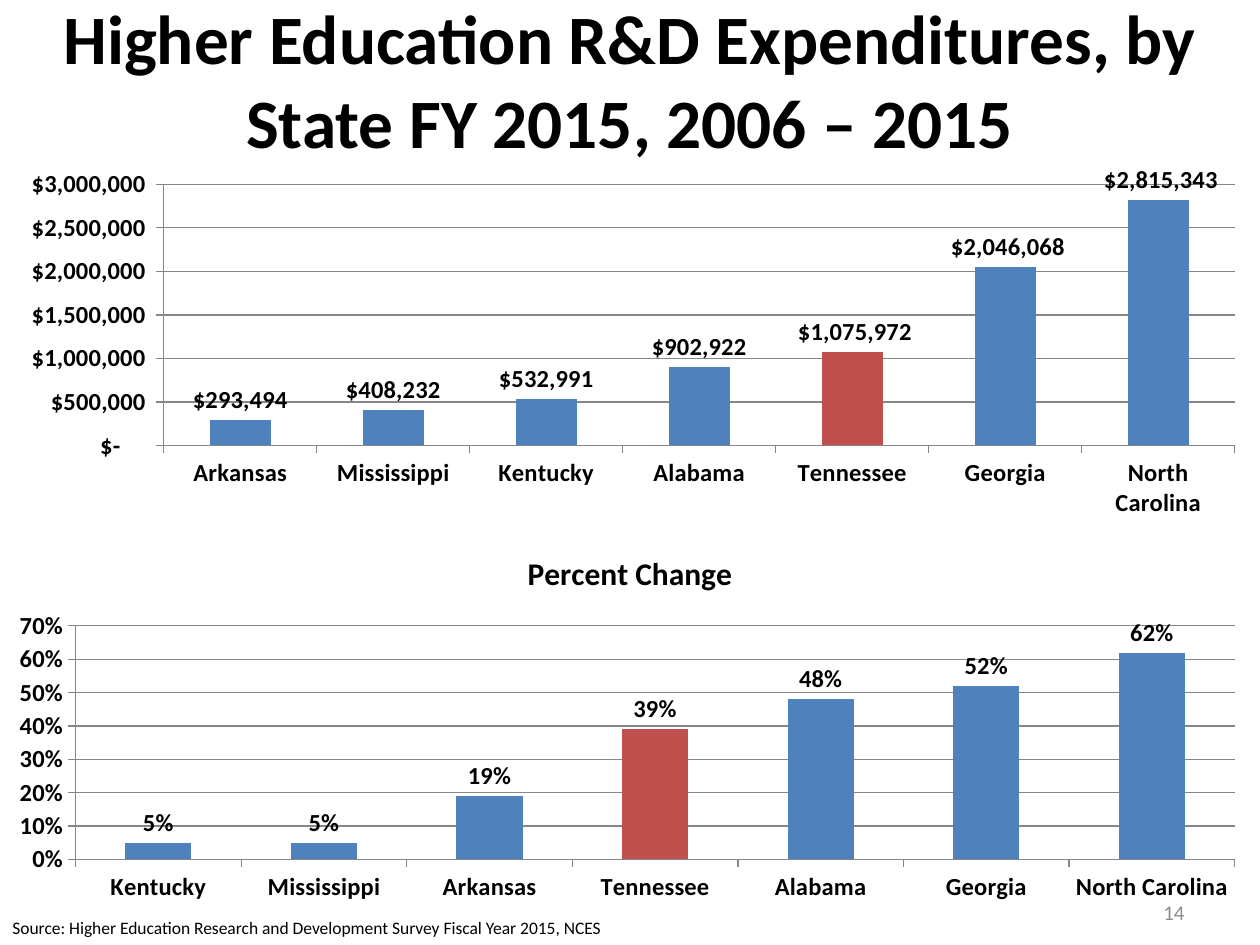
from lxml import etree
from pptx import Presentation
from pptx.chart.data import CategoryChartData
from pptx.dml.color import RGBColor
from pptx.enum.chart import XL_CHART_TYPE, XL_LABEL_POSITION, XL_TICK_MARK
from pptx.enum.text import MSO_ANCHOR, PP_ALIGN
from pptx.oxml.ns import qn
from pptx.util import Inches, Pt

FONT = "Calibri"
BLACK = RGBColor(0x00, 0x00, 0x00)
GRAY = RGBColor(0x8C, 0x8C, 0x8C)
AXIS_GRAY = RGBColor(0x86, 0x86, 0x86)
BLUE = RGBColor(0x4F, 0x81, 0xBD)
RED = RGBColor(0xC0, 0x50, 0x4D)
HIGHLIGHT = "Tennessee"
DOLLARS = '_("$"* #,##0_);_("$"* \\(#,##0\\);_("$"* "-"??_);_(@_)'

TEXTS = [
    dict(text="Higher Education R&D Expenditures, by State FY 2015, 2006 – 2015",
         box=(0, 0, 10, 1.25), align=PP_ALIGN.CENTER, anchor=MSO_ANCHOR.MIDDLE,
         wrap=True, font=dict(size=Pt(39.6), bold=True), color=BLACK),
    dict(text="Source: Higher Education Research and Development Survey Fiscal Year 2015, NCES",
         box=(0, 7.23, 5, 0.57), align=PP_ALIGN.LEFT, anchor=MSO_ANCHOR.TOP,
         wrap=False, font=dict(size=Pt(10), bold=False), color=BLACK),
    dict(text="14", box=(7.17, 7.04, 2.33, 0.4), align=PP_ALIGN.RIGHT,
         anchor=MSO_ANCHOR.MIDDLE, wrap=True,
         font=dict(size=Pt(12), bold=False), color=GRAY),
]

# The plot is left, top, width and height as fractions of the chart.
CHARTS = [
    dict(box=(0, 1.29, 10, 2.88), plot=(0.13, 0.06, 0.85, 0.72),
         name="Series 1", title=None, number_format=DOLLARS,
         maximum=3000000, step=500000,
         values={"Arkansas": 293494, "Mississippi": 408232, "Kentucky": 532991,
                 "Alabama": 902922, "Tennessee": 1075972, "Georgia": 2046068,
                 "North Carolina": 2815343}),
    dict(box=(0, 4.22, 10, 2.99), plot=(0.06, 0.25, 0.92, 0.62),
         name="Percent Change", title="Percent Change", number_format="0%",
         maximum=0.7, step=0.1,
         values={"Kentucky": 0.05, "Mississippi": 0.05, "Arkansas": 0.19,
                 "Tennessee": 0.39, "Alabama": 0.48, "Georgia": 0.52,
                 "North Carolina": 0.62}),
]


def set_font(font, color=BLACK, **values):
    font.name = FONT
    font.color.rgb = color
    for name, value in values.items():
        setattr(font, name, value)


def add_text(slide, item):
    shape = slide.shapes.add_textbox(*map(Inches, item["box"]))
    frame = shape.text_frame
    frame.word_wrap = item["wrap"]
    frame.vertical_anchor = item["anchor"]
    paragraph = frame.paragraphs[0]
    paragraph.alignment = item["align"]
    run = paragraph.add_run()
    run.text = item["text"]
    set_font(run.font, item["color"], **item["font"])


def place_plot(chart, plot):
    """Fix the inner plot area, without the axis labels, inside the chart."""
    area = chart.element.find(".//" + qn("c:plotArea"))
    for old_layout in area.findall(qn("c:layout")):
        area.remove(old_layout)
    layout = etree.Element(qn("c:layout"))
    area.insert(0, layout)
    manual = etree.SubElement(layout, qn("c:manualLayout"))
    settings = [("layoutTarget", "inner"), ("xMode", "edge"), ("yMode", "edge"),
                *zip("xywh", plot)]
    for tag, value in settings:
        etree.SubElement(manual, qn(f"c:{tag}")).set("val", str(value))


def add_column_chart(slide, item):
    data = CategoryChartData(number_format=item["number_format"])
    data.categories = list(item["values"])
    data.add_series(item["name"], list(item["values"].values()))
    chart = slide.shapes.add_chart(
        XL_CHART_TYPE.COLUMN_CLUSTERED, *map(Inches, item["box"]), data).chart
    set_font(chart.font, size=Pt(10))
    chart.has_legend = False
    chart.has_title = item["title"] is not None
    if chart.has_title:
        paragraph = chart.chart_title.text_frame.paragraphs[0]
        run = paragraph.add_run()
        run.text = item["title"]
        set_font(run.font, size=Pt(18), bold=True)

    for axis in (chart.category_axis, chart.value_axis):
        axis.major_tick_mark = XL_TICK_MARK.OUTSIDE
        axis.format.line.color.rgb = AXIS_GRAY
        set_font(axis.tick_labels.font, size=Pt(14), bold=True)
    value_axis = chart.value_axis
    value_axis.minimum_scale = 0
    value_axis.maximum_scale = item["maximum"]
    value_axis.major_unit = item["step"]
    value_axis.has_major_gridlines = True
    value_axis.major_gridlines.format.line.color.rgb = AXIS_GRAY

    plot = chart.plots[0]
    plot.gap_width = 150
    plot.vary_by_categories = False
    series = plot.series[0]
    highlighted = series.points[list(item["values"]).index(HIGHLIGHT)]
    for columns, color in ((series, BLUE), (highlighted, RED)):
        columns.format.fill.solid()
        columns.format.fill.fore_color.rgb = color
    labels = series.data_labels
    labels.show_value = True
    labels.position = XL_LABEL_POSITION.OUTSIDE_END
    set_font(labels.font, size=Pt(14), bold=True)

    for numbers in (value_axis.tick_labels, labels):
        numbers.number_format = item["number_format"]
        numbers.number_format_is_linked = False
    place_plot(chart, item["plot"])


def main():
    presentation = Presentation()
    presentation.slide_width = Inches(10)
    presentation.slide_height = Inches(7.5)
    slide = presentation.slides.add_slide(presentation.slide_layouts[6])
    for item in CHARTS:
        add_column_chart(slide, item)
    for item in TEXTS:
        add_text(slide, item)
    presentation.save("out.pptx")


if __name__ == "__main__":
    main()
